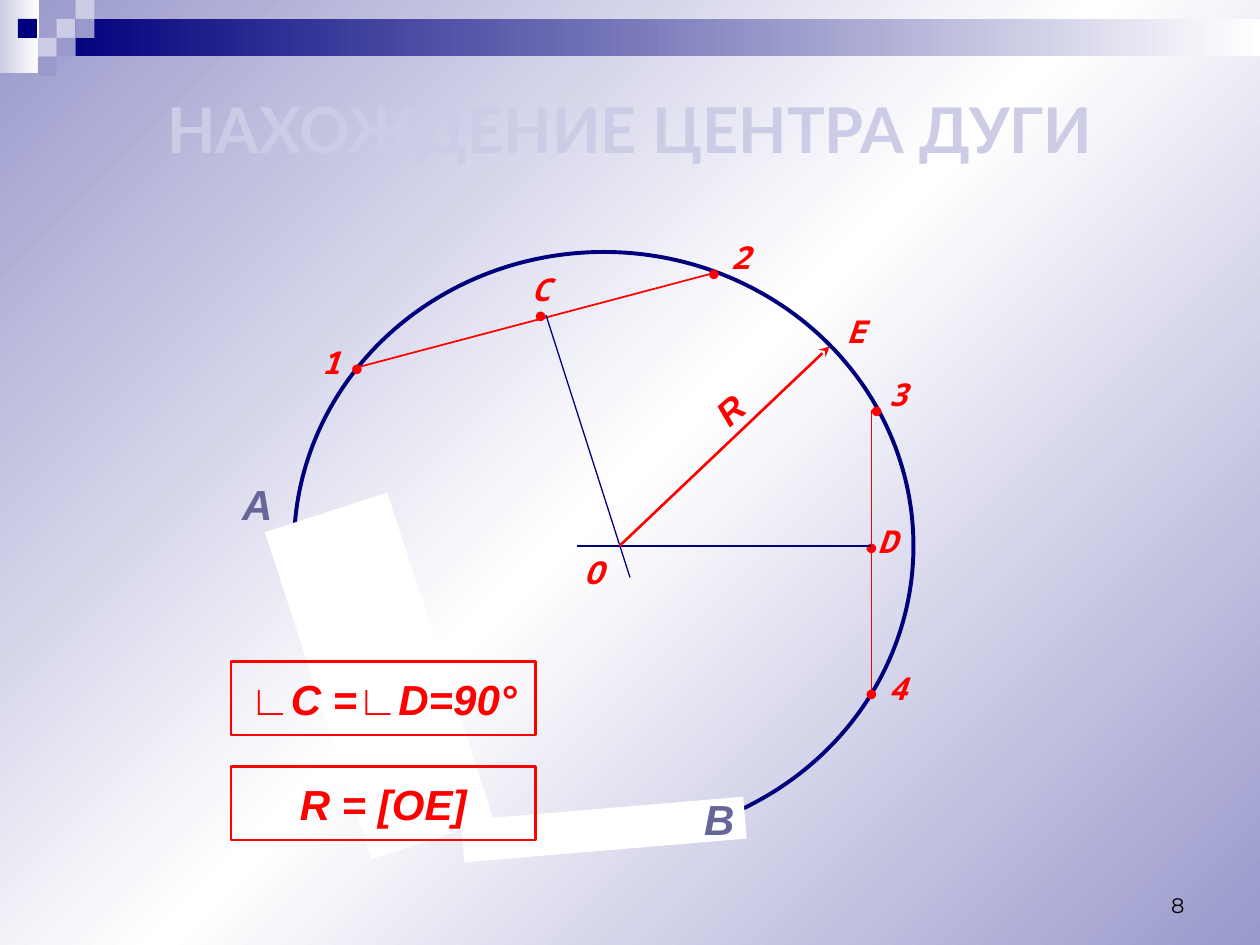
import copy

import pptx
import pptx.dml.color
import pptx.enum.shapes
import pptx.enum.text
import pptx.oxml
import pptx.oxml.ns
import pptx.util

Pt = pptx.util.Pt
qn = pptx.oxml.ns.qn
SHAPES = pptx.enum.shapes.MSO_SHAPE
ALIGN = pptx.enum.text.PP_ALIGN
ANCHOR = pptx.enum.text.MSO_ANCHOR

NAVY, RED, WHITE = "00007D", "FF0000", "FFFFFF"
LILAC, PALE, SLATE = "9999CC", "CCCCE6", "666699"


def rgb(color):
    return pptx.dml.color.RGBColor.from_string(color)


def add_xml(parent, tag, index=None, **attributes):
    child = pptx.oxml.parse_xml(f"<a:{tag} {pptx.oxml.ns.nsdecls('a')}/>")
    for key, value in attributes.items():
        child.set(key, value)
    parent.insert(len(parent) if index is None else index, child)
    return child


def write(holder, text, size=24, font="Arial", color=RED, bold=True, italic=True,
          align=ALIGN.CENTER, anchor=ANCHOR.MIDDLE, wrap=False):
    frame = holder.text_frame
    frame.word_wrap = wrap
    frame.auto_size = pptx.enum.text.MSO_AUTO_SIZE.NONE
    frame.vertical_anchor = anchor
    paragraph = frame.paragraphs[0]
    paragraph.alignment = align
    run = paragraph.add_run()
    run.text = text
    run.font.name, run.font.size = font, Pt(size)
    run.font.bold, run.font.italic = bold, italic
    run.font.color.rgb = rgb(color)
    return run


def shade(fill, element, colors, angle=0):
    """Fill with evenly spaced gradient colours; the angle runs clockwise."""
    fill.gradient()
    fill.gradient_angle = -angle % 360
    stop_list = next(element.iter(qn("a:gsLst")))
    for _ in colors[2:]:
        stop_list.append(copy.deepcopy(stop_list[0]))
    for i, (stop, color) in enumerate(zip(fill.gradient_stops, colors)):
        stop.position = i / (len(colors) - 1)
        stop.color.rgb = rgb(color)


class Drawing:
    """The current slide and the style of its figure."""

    def __init__(self, slide):
        self.slide = slide
        self.shapes = slide.shapes

    def background(self, colors, angle):
        shade(self.slide.background.fill, self.slide.element, colors, angle)

    def title(self, text, *box):
        title = self.shapes.title
        title.left, title.top, title.width, title.height = map(Pt, box)
        run = write(title, text, size=36, font="Lato", color=PALE, italic=False,
                    anchor=ANCHOR.TOP)
        outline = add_xml(run.font._element, "ln", 0, w=str(Pt(0.75)))
        add_xml(add_xml(outline, "solidFill"), "srgbClr", val=NAVY)

    def shape(self, *box, kind=SHAPES.RECTANGLE, fill=None, line=None, weight=1.5,
              rotation=0):
        shape = self.shapes.add_shape(kind, *map(Pt, box))
        shape.shadow.inherit = False
        shape.rotation = rotation
        if isinstance(fill, tuple):
            shade(shape.fill, shape.element, fill)
        elif fill:
            shape.fill.solid()
            shape.fill.fore_color.rgb = rgb(fill)
        else:
            shape.fill.background()
        if line:
            shape.line.color.rgb = rgb(line)
            shape.line.width = Pt(weight)
        else:
            shape.line.fill.background()
        return shape

    def text(self, text, *box, rotation=0, **style):
        holder = self.shapes.add_textbox(*map(Pt, box))
        holder.rotation = rotation
        write(holder, text, **style)

    def dot(self, x, y):
        self.text("•", x - 18, y - 18, 36, 36, size=20, bold=False, italic=False)

    def label(self, text, left, top):
        self.text(text, left, top, 30, 30, size=18, font="Noto Sans Mono")

    def line(self, start, end, color, weight, arrow=False):
        line = self.shapes.add_connector(
            pptx.enum.shapes.MSO_CONNECTOR.STRAIGHT, *map(Pt, start + end))
        line.line.color.rgb = rgb(color)
        line.line.width = Pt(weight)
        if arrow:
            add_xml(line.line._get_or_add_ln(), "tailEnd", type="stealth")
        add_xml(line.element.spPr, "effectLst")

    def formula(self, text, top):
        write(self.shape(132, top, 174, 42, line=RED), text)


def main():
    deck = pptx.Presentation()
    deck.slide_width, deck.slide_height = Pt(720), Pt(540)
    drawing = Drawing(deck.slides.add_slide(deck.slide_layouts[5]))
    drawing.background((LILAC, WHITE, LILAC), 45)

    # Header band with its mosaic of squares
    drawing.shape(0, 0, 22.3, 41.8, fill=(PALE, WHITE))
    drawing.shape(32.4, 10.8, 687.6, 21.4, fill=(NAVY, WHITE))
    tile = 10.8
    for column, row, color in [(3, 1, PALE), (4, 0, PALE), (4, 1, LILAC), (2, 2, PALE),
                               (0.95, 1, NAVY), (3, 2, LILAC), (2, 3, LILAC)]:
        drawing.shape(column * tile, row * tile, tile, tile, fill=color)
    drawing.text("8", 516, 492, 168, 36, size=12, font="Montserrat", color="000000",
                 bold=False, italic=False, align=ALIGN.RIGHT, anchor=ANCHOR.BOTTOM,
                 wrap=True)
    drawing.title("НАХОЖДЕНИЕ ЦЕНТРА ДУГИ", 48, 48, 624, 42)

    # Arc AB: a circle with its lower left part covered
    drawing.shape(168, 144, 354, 336, kind=SHAPES.OVAL, line=NAVY, weight=2.25)
    drawing.shape(180, 288, 73.5, 196.5, fill=WHITE, rotation=342)
    drawing.shape(264, 462, 162, 24, fill=WHITE, rotation=355.2)
    drawing.text("А", 132, 270, 30, 36, color=SLATE)
    drawing.text("В", 396, 450, 30, 36, color=SLATE)

    # Chords, the perpendiculars from their middles, and the radius
    chord_ends = [(204, 210), (408, 156), (501, 234), (498, 396)]
    middles = [(309, 180), (498, 312)]
    for point in chord_ends + middles:
        drawing.dot(*point)
    drawing.line(chord_ends[0], chord_ends[1], RED, 1)
    drawing.line((498, 234), chord_ends[3], RED, 1)
    drawing.line((312, 180), (360, 330), NAVY, 0.75)
    drawing.line(middles[1], (330, 312), NAVY, 0.75)
    drawing.line((354, 312), (474, 198), RED, 1.5, arrow=True)

    for name, left, top in [("1", 174, 192), ("2", 408, 132), ("3", 498, 210),
                            ("4", 498, 378), ("D", 492, 294), ("C", 294, 150),
                            ("O", 324, 312), ("E", 474, 174)]:
        drawing.label(name, left, top)
    drawing.text("R", 402, 216, 30, 36, size=20, rotation=318.5)

    drawing.formula("R = [OE]", 438)
    drawing.formula("∟C =∟D=90°", 378)
    deck.save("out.pptx")


if __name__ == "__main__":
    main()
